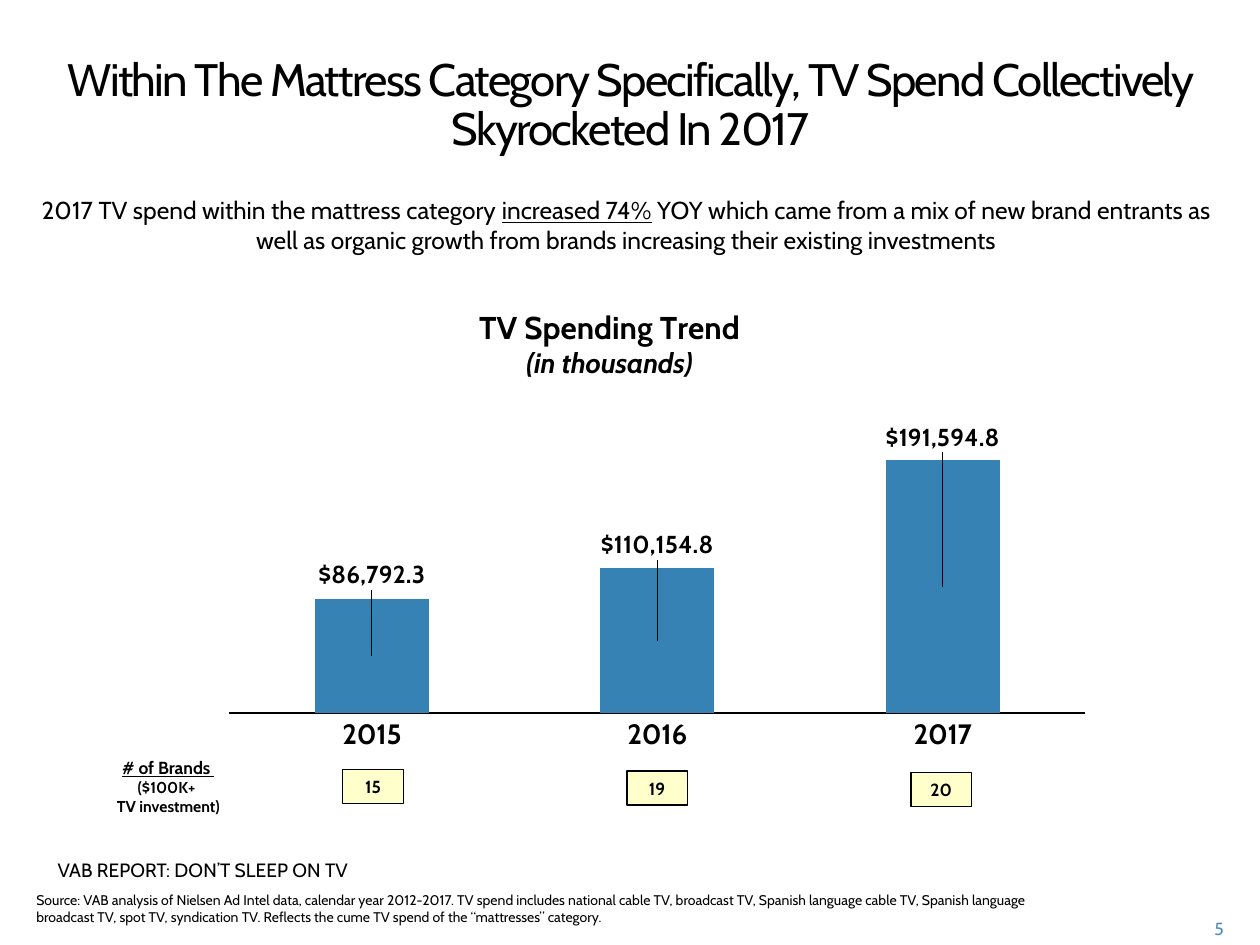
from dataclasses import dataclass

from lxml import etree
from pptx import Presentation
from pptx import util as u
from pptx.chart import data as chart_data
from pptx.dml.color import RGBColor
from pptx.enum import chart as ch, shapes, text
from pptx.oxml import ns

CENTER = text.PP_ALIGN.CENTER


@dataclass(frozen=True)
class Theme:
    font: str = "Cabin"
    ink: str = "000000"
    bar: str = "3682B4"
    number: str = "508ABA"
    tag: str = "FFFFCC"
    title: float = 26
    heading: float = 18
    axis: float = 16
    body: float = 14
    report: float = 11
    small: float = 10
    note: float = 9
    source: float = 8


def set_layout(parent, index, **values):
    """Give a chart part a manual layout, as fractions of the chart."""
    for old in parent.findall(ns.qn("c:layout")):
        parent.remove(old)
    layout = etree.Element(ns.qn("c:layout"))
    manual = etree.SubElement(layout, ns.qn("c:manualLayout"))
    for name, value in values.items():
        item = etree.SubElement(manual, ns.qn(f"c:{name}"))
        item.set("val", value if isinstance(value, str) else f"{value:.3f}")
    parent.insert(index, layout)


class Page:
    def __init__(self, deck, theme):
        self.theme = theme
        self.slide = deck.slides.add_slide(deck.slide_layouts[1])

    def style(self, font, size, bold=False, color=None):
        font.name = self.theme.font
        font.size = u.Pt(size)
        font.bold = bold
        font.color.rgb = RGBColor.from_string(color or self.theme.ink)

    def place(self, shape, box):
        shape.left, shape.top, shape.width, shape.height = map(u.Inches, box)

    def title(self, words, box):
        shape = self.slide.shapes.title
        self.place(shape, box)
        frame = shape.text_frame
        frame.text = words
        frame.vertical_anchor = text.MSO_ANCHOR.TOP
        frame.auto_size = text.MSO_AUTO_SIZE.NONE
        para = frame.paragraphs[0]
        para.alignment = CENTER
        para.line_spacing = u.Pt(28)
        span = para.runs[0]
        self.style(span.font, self.theme.title)
        span.font._element.set("spc", "-100")

    def body(self, parts, underlined, box):
        shape = self.slide.placeholders[1]
        self.place(shape, box)
        shape.text_frame.auto_size = text.MSO_AUTO_SIZE.NONE
        para = shape.text_frame.paragraphs[0]
        props = para._p.get_or_add_pPr()
        props.set("marL", "0")
        props.set("indent", "0")
        etree.SubElement(props, ns.qn("a:buNone"))
        para.alignment = CENTER
        para.space_before = u.Pt(0)
        for part in parts:
            span = para.add_run()
            span.text = part
            self.style(span.font, self.theme.body)
            span.font.underline = part == underlined

    def label(self, lines, sizes, box, align=None, bold=False, color=None):
        shape = self.slide.shapes.add_textbox(*map(u.Inches, box))
        frame = shape.text_frame
        frame.word_wrap = True
        frame.text = "\n".join(lines)
        for para, size in zip(frame.paragraphs, sizes):
            para.alignment = align
            self.style(para.runs[0].font, size, bold, color)
        return frame

    def tag(self, words, box):
        shape = self.slide.shapes.add_shape(
            shapes.MSO_SHAPE.RECTANGLE, *map(u.Inches, box))
        shape.shadow.inherit = False
        shape.fill.solid()
        shape.fill.fore_color.rgb = RGBColor.from_string(self.theme.tag)
        shape.line.color.rgb = RGBColor.from_string(self.theme.ink)
        shape.line.width = u.Pt(0.75)
        shape.text_frame.text = words
        para = shape.text_frame.paragraphs[0]
        para.alignment = CENTER
        self.style(para.runs[0].font, self.theme.small, True)

    def columns(self, heading, unit, spend, box):
        data = chart_data.CategoryChartData(number_format='"$"#,##0.0')
        data.categories = list(spend)
        data.add_series("Series 1", spend.values())
        chart = self.slide.shapes.add_chart(
            ch.XL_CHART_TYPE.COLUMN_STACKED, *map(u.Inches, box), data).chart
        self.style(chart.font, self.theme.small)
        chart.has_legend = False

        frame = chart.chart_title.text_frame
        frame.text = f"{heading}\n{unit}"
        for para, size in zip(frame.paragraphs, (self.theme.heading, self.theme.axis)):
            self.style(para.runs[0].font, size, True)
        frame.paragraphs[1].runs[0].font.italic = True
        set_layout(chart.chart_title._element, 1,
                   xMode="edge", yMode="edge", x=0.297, y=0.06)

        top_value, plot_height = 250000, 0.677
        values = chart.value_axis
        values.minimum_scale, values.maximum_scale = 0, top_value
        values.has_major_gridlines = False
        values.visible = False
        years = chart.category_axis
        years.major_tick_mark = ch.XL_TICK_MARK.NONE
        years.format.line.color.rgb = RGBColor.from_string(self.theme.ink)
        years.format.line.width = u.Pt(0.75)
        self.style(years.tick_labels.font, self.theme.axis, True)
        set_layout(chart.element.xpath(".//c:plotArea")[0], 0,
                   layoutTarget="inner", xMode="edge", yMode="edge",
                   x=0.021, y=0.225, w=0.96, h=plot_height)

        plot = chart.plots[0]
        plot.vary_by_categories = False
        plot.gap_width, plot.overlap = 150, 100
        series = plot.series[0]
        series.format.fill.solid()
        series.format.fill.fore_color.rgb = RGBColor.from_string(self.theme.bar)
        series.data_labels.show_value = True
        self.style(series.data_labels.font, self.theme.body, True)
        for index in range(len(spend)):
            self.style(series.points[index].data_label.font, self.theme.body, True)
        # Lift each label from the middle of its column to just above the top.
        for point, value in zip(chart.element.xpath(".//c:dLbl"), spend.values()):
            lift = value / top_value * plot_height / 2 + 0.047
            set_layout(point, 1, x=0.0, y=-lift)


def main():
    deck = Presentation()
    deck.slide_width, deck.slide_height = u.Inches(10), u.Inches(7.5)
    theme = Theme()
    page = Page(deck, theme)

    page.title("Within The Mattress Category Specifically, TV Spend Collectively "
               "Skyrocketed In 2017", (0.19, 0.4, 9.63, 0.65))
    growth = "increased 74%"
    page.body(["2017 TV spend within the mattress category ", growth,
               " YOY which came from a mix of new brand entrants as well as organic "
               "growth from brands increasing their existing investments"],
              growth, (0.19, 1.5, 9.56, 0.65))
    page.columns("TV Spending Trend", "(in thousands)",
                 {"2015": 86792.3, "2016": 110154.8, "2017": 191594.8},
                 (1.67, 2.17, 7.08, 3.87))

    brands = page.label(["# of Brands ", "($100K+ ", "TV investment)"],
                        (theme.small, theme.note, theme.note),
                        (0.74, 5.96, 1.19, 0.57), CENTER, bold=True)
    brands.paragraphs[0].runs[0].font.underline = True
    for index, count in enumerate(("15", "19", "20")):
        page.tag(count, (2.72 + 2.255 * index, 6.11 + 0.01 * index, 0.48, 0.27))

    page.label(["VAB REPORT: DON’T SLEEP ON TV"], [theme.report],
               (0.36, 6.76, 2.85, 0.47))
    page.label(["Source: VAB analysis of Nielsen Ad Intel data, calendar year 2012-2017. "
                "TV spend includes national cable TV, broadcast TV, Spanish language "
                "cable TV, Spanish language broadcast TV, spot TV, syndication TV. "
                "Reflects the cume TV spend of the “mattresses” category."],
               [theme.source], (0.19, 7.03, 8.17, 0.4))
    page.label(["5"], [theme.small], (9.2, 7.24, 0.61, 0.25),
               text.PP_ALIGN.RIGHT, color=theme.number)
    deck.save("out.pptx")


if __name__ == "__main__":
    main()
